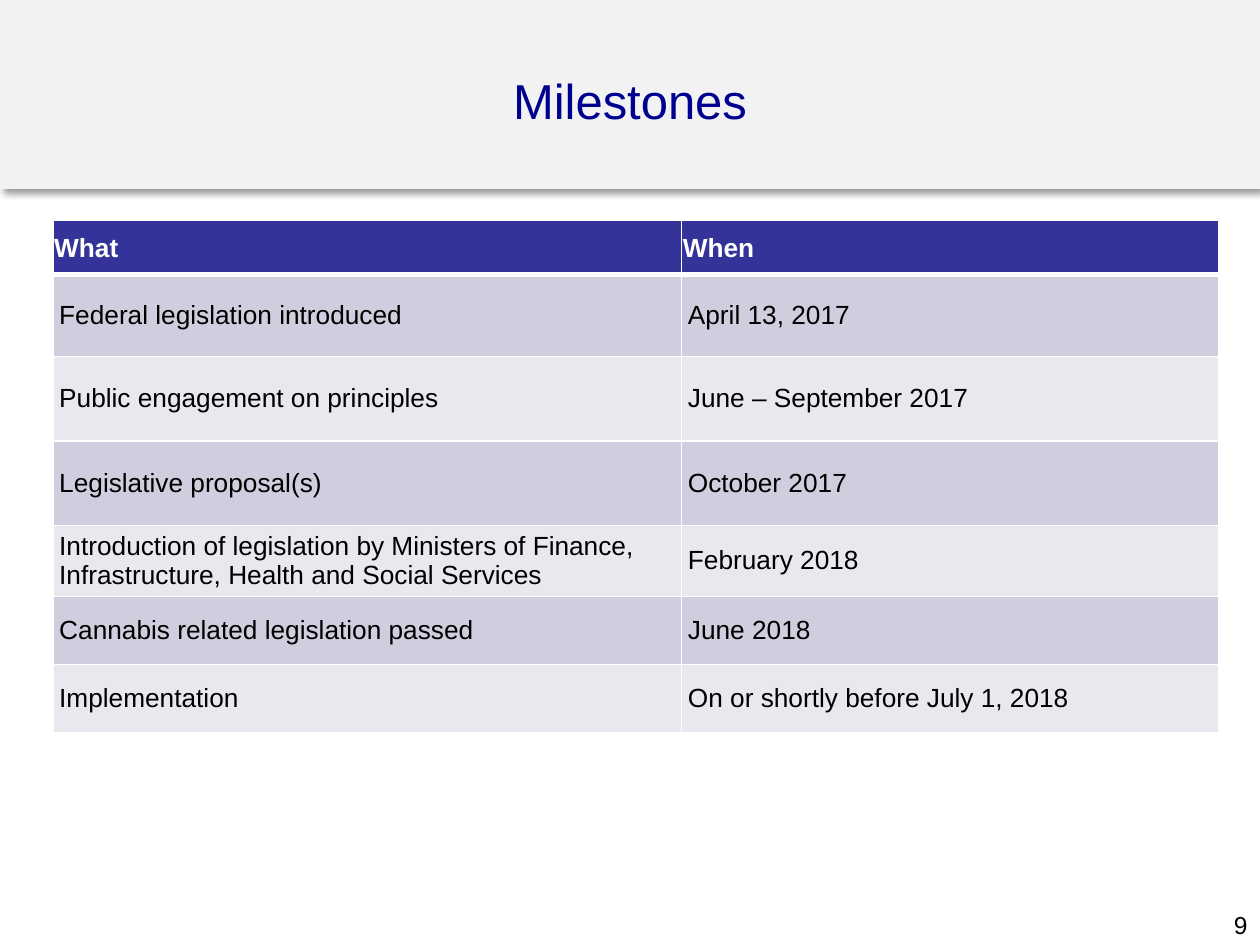
from lxml.etree import SubElement
from pptx import Presentation
from pptx.dml.color import RGBColor
from pptx.enum.shapes import MSO_SHAPE
from pptx.enum.text import MSO_ANCHOR, PP_ALIGN
from pptx.oxml import parse_xml
from pptx.oxml.ns import nsdecls, qn
from pptx.util import Inches, Pt

FONT = "Arial"
BLACK = RGBColor(0x00, 0x00, 0x00)
WHITE = RGBColor(0xFF, 0xFF, 0xFF)
NAVY = RGBColor(0x00, 0x00, 0x90)
BAND_GREY = RGBColor(0xF2, 0xF2, 0xF2)
HEADER_BLUE = RGBColor(0x33, 0x33, 0x99)
ROW_FILLS = (RGBColor(0xE8, 0xE8, 0xEF), RGBColor(0xCE, 0xCE, 0xDE))

COL_WIDTHS = (4.99, 4.26)
ROW_HEIGHTS = (0.43, 0.65, 0.67, 0.67, 0.54, 0.54, 0.54)
MILESTONES = (
    ("What", "When"),
    ("Federal legislation introduced", "April 13, 2017"),
    ("Public engagement on principles", "June – September 2017"),
    ("Legislative proposal(s)", "October 2017"),
    ("Introduction of legislation by Ministers of Finance, "
     "Infrastructure, Health and Social Services", "February 2018"),
    ("Cannabis related legislation passed", "June 2018"),
    ("Implementation", "On or shortly before July 1, 2018"),
)


def style_text(tf, size, color, align=PP_ALIGN.LEFT, bold=False):
    """Format the first paragraph of a text frame."""
    p = tf.paragraphs[0]
    p.alignment = align
    font = p.runs[0].font
    font.name, font.size, font.bold = FONT, Pt(size), bold
    font.color.rgb = color


def add_band(s, left, top, width, height):
    """Draw the shadowed title band behind everything else."""
    sp = s.shapes.add_shape(MSO_SHAPE.RECTANGLE, Inches(left), Inches(top),
                            Inches(width), Inches(height))
    sp.fill.solid()
    sp.fill.fore_color.rgb = BAND_GREY
    sp.line.fill.background()
    sp._element.spPr.append(parse_xml(
        f'<a:effectLst {nsdecls("a")}><a:outerShdw blurRad="{Pt(4)}" '
        f'dist="{Pt(3)}" dir="2700000" algn="tl" rotWithShape="0">'
        '<a:srgbClr val="000000"><a:alpha val="40000"/></a:srgbClr>'
        '</a:outerShdw></a:effectLst>'))
    s.shapes._spTree.insert(2, sp._element)


def place_title(s, left, top, width, height):
    """Move and format the title placeholder."""
    title = s.shapes.title
    title.left, title.top = Inches(left), Inches(top)
    title.width, title.height = Inches(width), Inches(height)
    tf = title.text_frame
    tf.text = "Milestones"
    tf.vertical_anchor = MSO_ANCHOR.MIDDLE
    style_text(tf, 28, NAVY, PP_ALIGN.CENTER)


def add_page_number(s, left, top, width, height):
    """Add the page number at the right of its box."""
    box = s.shapes.add_textbox(Inches(left), Inches(top),
                               Inches(width), Inches(height))
    tf = box.text_frame
    tf.word_wrap = True
    tf.text = "9"
    style_text(tf, 14, BLACK, PP_ALIGN.RIGHT)


def set_borders(cell, top, bottom):
    """Give a cell white borders, with top and bottom widths in points."""
    tcPr = cell._tc.get_or_add_tcPr()
    for side, width in (("L", 1), ("R", 1), ("T", top), ("B", bottom)):
        ln = SubElement(tcPr, qn(f"a:ln{side}"), w=str(Pt(width)))
        fill = SubElement(ln, qn("a:solidFill"))
        SubElement(fill, qn("a:srgbClr"), val=str(WHITE))


def format_cell(cell, row):
    """Style a cell according to its row."""
    header = row == 0
    set_borders(cell, 3 if row == 1 else 1, 3 if header else 1)
    cell.fill.solid()
    cell.fill.fore_color.rgb = HEADER_BLUE if header else ROW_FILLS[row % 2]
    cell.vertical_anchor = MSO_ANCHOR.MIDDLE
    inset = Inches(0.01 if header else 0.05)
    cell.margin_left = cell.margin_right = cell.margin_top = inset
    cell.margin_bottom = Inches(0) if header else inset
    style_text(cell.text_frame, 15, WHITE if header else BLACK, bold=header)


def add_milestones(s, left, top, width, height):
    """Add the table of milestones and dates."""
    table = s.shapes.add_table(len(MILESTONES), len(COL_WIDTHS), Inches(left),
                               Inches(top), Inches(width), Inches(height)).table
    for col, w in zip(table.columns, COL_WIDTHS):
        col.width = Inches(w)
    for i, (texts, h) in enumerate(zip(MILESTONES, ROW_HEIGHTS)):
        table.rows[i].height = Inches(h)
        for j, text in enumerate(texts):
            cell = table.cell(i, j)
            cell.text = text
            format_cell(cell, i)


def main():
    """Build and save the slide."""
    prs = Presentation()
    prs.slide_width, prs.slide_height = Inches(10), Inches(7.5)
    s = prs.slides.add_slide(prs.slide_layouts[5])
    add_band(s, 0, 0, 10, 1.5)
    place_title(s, 0.5, 0.17, 9, 1.25)
    add_milestones(s, 0.42, 1.75, sum(COL_WIDTHS), sum(ROW_HEIGHTS))
    add_page_number(s, 7.67, 7.17, 2.33, 0.33)
    prs.save("out.pptx")


if __name__ == "__main__":
    main()
